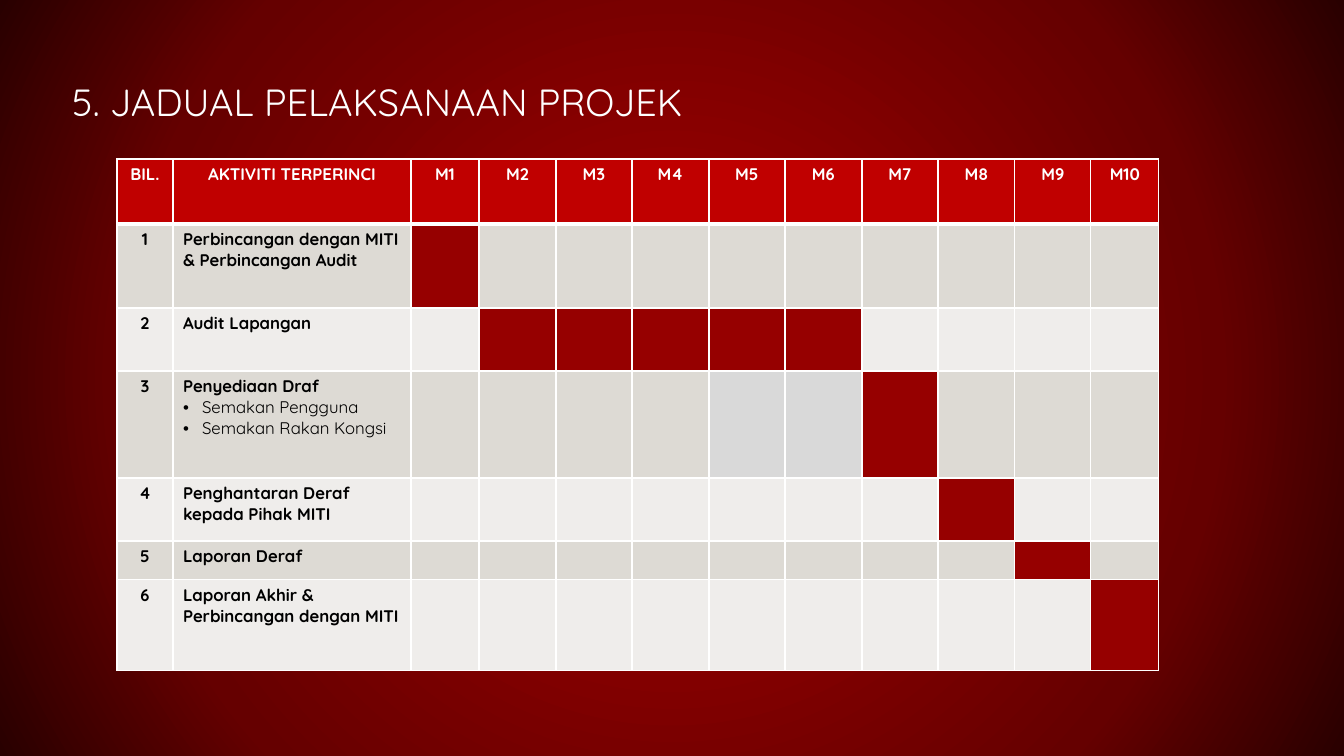
from lxml import etree
from pptx import Presentation
from pptx.dml.color import RGBColor
from pptx.enum import text
from pptx.oxml import ns
from pptx.util import Emu, Pt

SLIDE_WIDTH, SLIDE_HEIGHT = 1344, 756
EMU_PER_PX = 12192000 / SLIDE_WIDTH
TITLE_ONLY = 5

WHITE = RGBColor(0xFF, 0xFF, 0xFF)
BLACK = RGBColor(0x00, 0x00, 0x00)
HEADER_RED = RGBColor(0xC0, 0x00, 0x00)
BAR_RED = RGBColor(0x96, 0x00, 0x00)
MID_RED = RGBColor(0x65, 0x00, 0x00)
EDGE_RED = RGBColor(0x29, 0x00, 0x00)
DARK_BAND = RGBColor(0xDD, 0xDA, 0xD4)
LIGHT_BAND = RGBColor(0xEF, 0xED, 0xEB)
GREY = RGBColor(0xD9, 0xD9, 0xD9)

BACKGROUND_STOPS = [(17, BAR_RED), (71, MID_RED), (100, EDGE_RED)]

HEADINGS = ["BIL.", "AKTIVITI TERPERINCI"] + [f"M{month}" for month in range(1, 11)]
# Activity, its sub-items, and the months in which it runs
ACTIVITIES = [
    ("Perbincangan dengan MITI & Perbincangan Audit", [], [1]),
    ("Audit Lapangan", [], range(2, 7)),
    ("Penyediaan Draf", ["Semakan Pengguna", "Semakan Rakan Kongsi"], [7]),
    ("Penghantaran Deraf kepada Pihak MITI", [], [8]),
    ("Laporan Deraf", [], [9]),
    ("Laporan Akhir & Perbincangan dengan MITI", [], [10]),
]
GREY_MONTHS = {(3, 5), (3, 6)}
COLUMN_WIDTHS = [56, 238, 68] + [77, 76] * 4 + [68]
ROW_HEIGHTS = [65, 84, 63, 107, 63, 39, 91]


def px(length):
    return Emu(round(length * EMU_PER_PX))


def add_xml(parent, tag, **attributes):
    return etree.SubElement(parent, ns.qn(tag), attributes)


class SlideBuilder:
    font_name = "Quicksand"
    body_size = Pt(12)
    title_size = Pt(27)

    def __init__(self, presentation):
        layout = presentation.slide_layouts[TITLE_ONLY]
        self.slide = presentation.slides.add_slide(layout)

    def set_radial_background(self, stops):
        self.slide.background.fill.gradient()
        gradient = next(self.slide.element.iter(ns.qn("a:gradFill")))
        for child in list(gradient):
            gradient.remove(child)
        stop_list = add_xml(gradient, "a:gsLst")
        for percent, color in stops:
            stop = add_xml(stop_list, "a:gs", pos=str(percent * 1000))
            add_xml(stop, "a:srgbClr", val=str(color))
        circle = add_xml(gradient, "a:path", path="circle")
        add_xml(circle, "a:fillToRect", l="50000", t="50000", r="50000", b="50000")

    def format_text(self, paragraph, color, size, bold=False, align=text.PP_ALIGN.LEFT):
        paragraph.alignment = align
        for run in paragraph.runs:
            formats = {"name": self.font_name, "size": size, "bold": bold}
            for name, value in formats.items():
                setattr(run.font, name, value)
            run.font.color.rgb = color

    def set_title(self, wording, left, top, width, height):
        title = self.slide.shapes.title
        box = {"left": left, "top": top, "width": width, "height": height}
        for name, value in box.items():
            setattr(title, name, px(value))
        frame = title.text_frame
        frame.text = wording
        formats = {
            "margin_left": px(13), "margin_right": px(13),
            "margin_top": px(7), "margin_bottom": px(7),
            "vertical_anchor": text.MSO_ANCHOR.TOP,
            "auto_size": text.MSO_AUTO_SIZE.NONE, "word_wrap": True,
        }
        for name, value in formats.items():
            setattr(frame, name, value)
        paragraph = frame.paragraphs[0]
        paragraph.line_spacing = 0.9
        paragraph.space_before = Pt(16)
        self.format_text(paragraph, WHITE, self.title_size)

    def add_table(self, left, top, column_widths, row_heights):
        frame = self.slide.shapes.add_table(
            len(row_heights), len(column_widths), px(left), px(top),
            px(sum(column_widths)), px(sum(row_heights)))
        table = frame.table
        table.horz_banding = False
        for column, width in zip(table.columns, column_widths):
            column.width = px(width)
        for row, height in zip(table.rows, row_heights):
            row.height = px(height)
        return table

    def style_cell(self, cell, fill, bottom_border=1):
        cell.fill.solid()
        cell.fill.fore_color.rgb = fill
        properties = cell.fill._xPr
        borders = {"a:lnL": 1, "a:lnR": 1, "a:lnT": 1, "a:lnB": bottom_border}
        for index, (side, points) in enumerate(borders.items()):
            line = add_xml(properties, side, w=str(Pt(points)))
            add_xml(add_xml(line, "a:solidFill"), "a:srgbClr", val=str(WHITE))
            properties.insert(index, line)

    def write_cell(self, cell, wording, color, align=text.PP_ALIGN.LEFT):
        paragraph = cell.text_frame.paragraphs[0]
        paragraph.text = wording
        self.format_text(paragraph, color, self.body_size, True, align)

    def add_bullet(self, cell, wording):
        paragraph = cell.text_frame.add_paragraph()
        paragraph.text = wording
        self.format_text(paragraph, BLACK, self.body_size)
        properties = paragraph._p.get_or_add_pPr()
        properties.set("marL", str(px(19)))
        properties.set("indent", str(-px(19)))
        add_xml(properties, "a:buFont", typeface="Arial")
        add_xml(properties, "a:buChar", char="•")

    def shrink_empty_cell(self, cell):
        """Keep the default 18 pt of an empty cell from stretching its row."""
        paragraph = cell.text_frame.paragraphs[0]
        add_xml(paragraph._p, "a:endParaRPr", sz=str(round(self.body_size.pt * 100)))

    def fill_header(self, table, headings):
        for column, heading in enumerate(headings):
            cell = table.cell(0, column)
            self.style_cell(cell, HEADER_RED, bottom_border=3)
            self.write_cell(cell, heading, WHITE, text.PP_ALIGN.CENTER)

    def fill_activity(self, table, number, activity, sub_items, active_months):
        band = DARK_BAND if number % 2 else LIGHT_BAND
        number_cell, activity_cell, *month_cells = table.rows[number].cells
        for cell in (number_cell, activity_cell):
            self.style_cell(cell, band)
        self.write_cell(number_cell, str(number), BLACK, text.PP_ALIGN.CENTER)
        self.write_cell(activity_cell, activity, BLACK)
        for sub_item in sub_items:
            self.add_bullet(activity_cell, sub_item)
        for month, cell in enumerate(month_cells, start=1):
            idle = GREY if (number, month) in GREY_MONTHS else band
            self.style_cell(cell, BAR_RED if month in active_months else idle)
            self.shrink_empty_cell(cell)


def main():
    presentation = Presentation()
    presentation.slide_width = px(SLIDE_WIDTH)
    presentation.slide_height = px(SLIDE_HEIGHT)

    builder = SlideBuilder(presentation)
    builder.set_radial_background(BACKGROUND_STOPS)
    builder.set_title("5. JADUAL PELAKSANAAN PROJEK", 59, 77, 1183, 84)
    schedule = builder.add_table(117, 159, COLUMN_WIDTHS, ROW_HEIGHTS)
    builder.fill_header(schedule, HEADINGS)
    for number, activity in enumerate(ACTIVITIES, start=1):
        builder.fill_activity(schedule, number, *activity)

    presentation.save("out.pptx")


if __name__ == "__main__":
    main()
